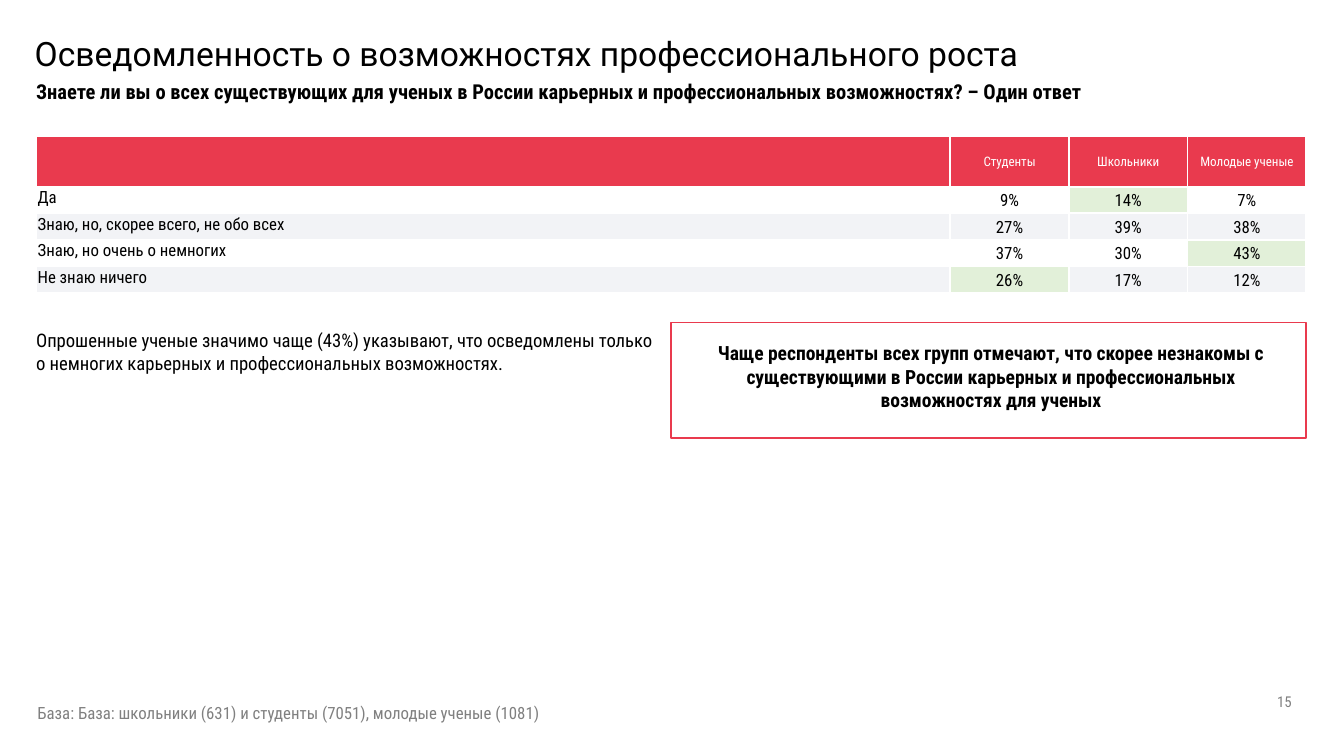
"""Build the slide on awareness of professional growth opportunities."""
from lxml import etree
from pptx import Presentation
from pptx.dml.color import RGBColor
from pptx.enum.shapes import MSO_SHAPE
from pptx.enum.text import MSO_ANCHOR, PP_ALIGN
from pptx.oxml.ns import qn
from pptx.util import Inches, Pt

LEFT, CENTER, RIGHT = PP_ALIGN.LEFT, PP_ALIGN.CENTER, PP_ALIGN.RIGHT
TOP, MIDDLE = MSO_ANCHOR.TOP, MSO_ANCHOR.MIDDLE
RECTANGLE = MSO_SHAPE.RECTANGLE

SLIDE_WIDTH = 10
SLIDE_HEIGHT = SLIDE_WIDTH * 9 / 16
COLORS = {"red": "E93A4E", "green": "E2F0D9", "band": "F2F3F6",
          "white": "FFFFFF", "black": "000000", "gray": "808080"}
BODY_FONT = "Roboto Condensed"
PADDING = (0.1, 0.05, 0.1, 0.05)

TEXTS = [
    {"text": "Осведомленность о возможностях профессионального роста",
     "box": (0.16, 0.15, 8.62, 1.09), "size": 18, "font": "Roboto",
     "spacing": Pt(20), "padding": (0.1, 0.12, 0.1, 0.05)},
    {"text": "15", "box": (7.46, 5.07, 2.25, 0.3), "size": 8,
     "color": "gray", "align": RIGHT, "anchor": MIDDLE},
    {"text": "Чаще респонденты всех групп отмечают, что скорее незнакомы с "
             "существующими в России карьерных и профессиональных "
             "возможностях для ученых",
     "box": (5.01, 2.49, 4.73, 0.63), "size": 10.5, "bold": True, "align": CENTER},
    {"text": "Опрошенные ученые значимо чаще (43%) указывают, что осведомлены "
             "только о немногих карьерных и профессиональных возможностях.",
     "box": (0.17, 2.4, 4.82, 0.44), "size": 10},
    {"text": "Знаете ли вы о всех существующих для ученых в России карьерных и "
             "профессиональных возможностях? – Один ответ",
     "box": (0.17, 0.49, 8.24, 0.7), "size": 11, "bold": True,
     "spacing": 1.02, "padding": (0.1, 0.1, 0.1, 0.1)},
    {"text": "База: База: школьники (631) и студенты (7051), молодые ученые (1081)",
     "box": (0.18, 5.18, 4.82, 0.25), "size": 9, "color": "gray"},
]
FRAME_BOX = (4.99, 2.4, 4.73, 0.86)

ROWS = [
    ("", "Студенты", "Школьники", "Молодые ученые"),
    ("Да", "9%", "14%", "7%"),
    ("Знаю, но, скорее всего, не обо всех", "27%", "39%", "38%"),
    ("Знаю, но очень о немногих", "37%", "30%", "43%"),
    ("Не знаю ничего", "26%", "17%", "12%"),
]
HIGHLIGHTS = {(1, 2), (3, 3), (4, 1)}
TABLE_BOX = (0.27, 1.01, 9.45, 1.17)
LABEL_WIDTH, HEADER_HEIGHT = 6.8, 0.38
CELL_PADDING = (0.01, 0.01, 0.01, 0)


def rgb(name):
    return RGBColor.from_string(COLORS[name])


def set_padding(target, padding):
    for side, value in zip(("left", "top", "right", "bottom"), padding):
        setattr(target, f"margin_{side}", Inches(value))


def write(tf, text, size, color="black", font=BODY_FONT, bold=False,
          align=LEFT, spacing=None):
    p = tf.paragraphs[0]
    p.alignment = align
    p.line_spacing = spacing
    r = p.add_run()
    r.text = text
    for name, value in {"size": Pt(size), "name": font, "bold": bold}.items():
        setattr(r.font, name, value)
    r.font.color.rgb = rgb(color)


def add_text(s, box, anchor=TOP, padding=PADDING, **style):
    tf = s.shapes.add_textbox(*map(Inches, box)).text_frame
    tf.word_wrap = True
    tf.vertical_anchor = anchor
    set_padding(tf, padding)
    write(tf, **style)


def add_borders(cell):
    tc_pr = cell._tc.get_or_add_tcPr()
    for i, side in enumerate(("lnL", "lnR", "lnT", "lnB")):
        line = etree.Element(qn(f"a:{side}"), w=str(Pt(1)))
        fill = etree.SubElement(line, qn("a:solidFill"))
        etree.SubElement(fill, qn("a:srgbClr"), val=COLORS["white"])
        tc_pr.insert(i, line)


def cell_fill(row, col):
    if row == 0:
        return "red"
    if (row, col) in HIGHLIGHTS:
        return "green"
    return "white" if row % 2 else "band"


def add_answers(s):
    count = len(ROWS[0])
    table = s.shapes.add_table(len(ROWS), count, *map(Inches, TABLE_BOX)).table
    value_width = (TABLE_BOX[2] - LABEL_WIDTH) / (count - 1)
    row_height = (TABLE_BOX[3] - HEADER_HEIGHT) / (len(ROWS) - 1)
    for i, column in enumerate(table.columns):
        column.width = Inches(value_width if i else LABEL_WIDTH)
    for i, row in enumerate(table.rows):
        row.height = Inches(row_height if i else HEADER_HEIGHT)
    for i, values in enumerate(ROWS):
        for j, value in enumerate(values):
            cell = table.cell(i, j)
            set_padding(cell, CELL_PADDING)
            cell.vertical_anchor = MIDDLE if j else TOP
            cell.fill.solid()
            cell.fill.fore_color.rgb = rgb(cell_fill(i, j))
            add_borders(cell)
            if value:
                write(cell.text_frame, value, 9 if i else 7,
                      "black" if i else "white", align=CENTER if j else LEFT)


def add_frame(s):
    frame = s.shapes.add_shape(RECTANGLE, *map(Inches, FRAME_BOX))
    frame.shadow.inherit = False
    frame.fill.background()
    frame.line.color.rgb = rgb("red")
    frame.line.width = Pt(1)


def main():
    prs = Presentation()
    prs.slide_width, prs.slide_height = Inches(SLIDE_WIDTH), Inches(SLIDE_HEIGHT)
    s = prs.slides.add_slide(prs.slide_layouts[6])
    add_frame(s)
    for item in TEXTS:
        add_text(s, **item)
    add_answers(s)
    prs.save("out.pptx")


if __name__ == "__main__":
    main()
